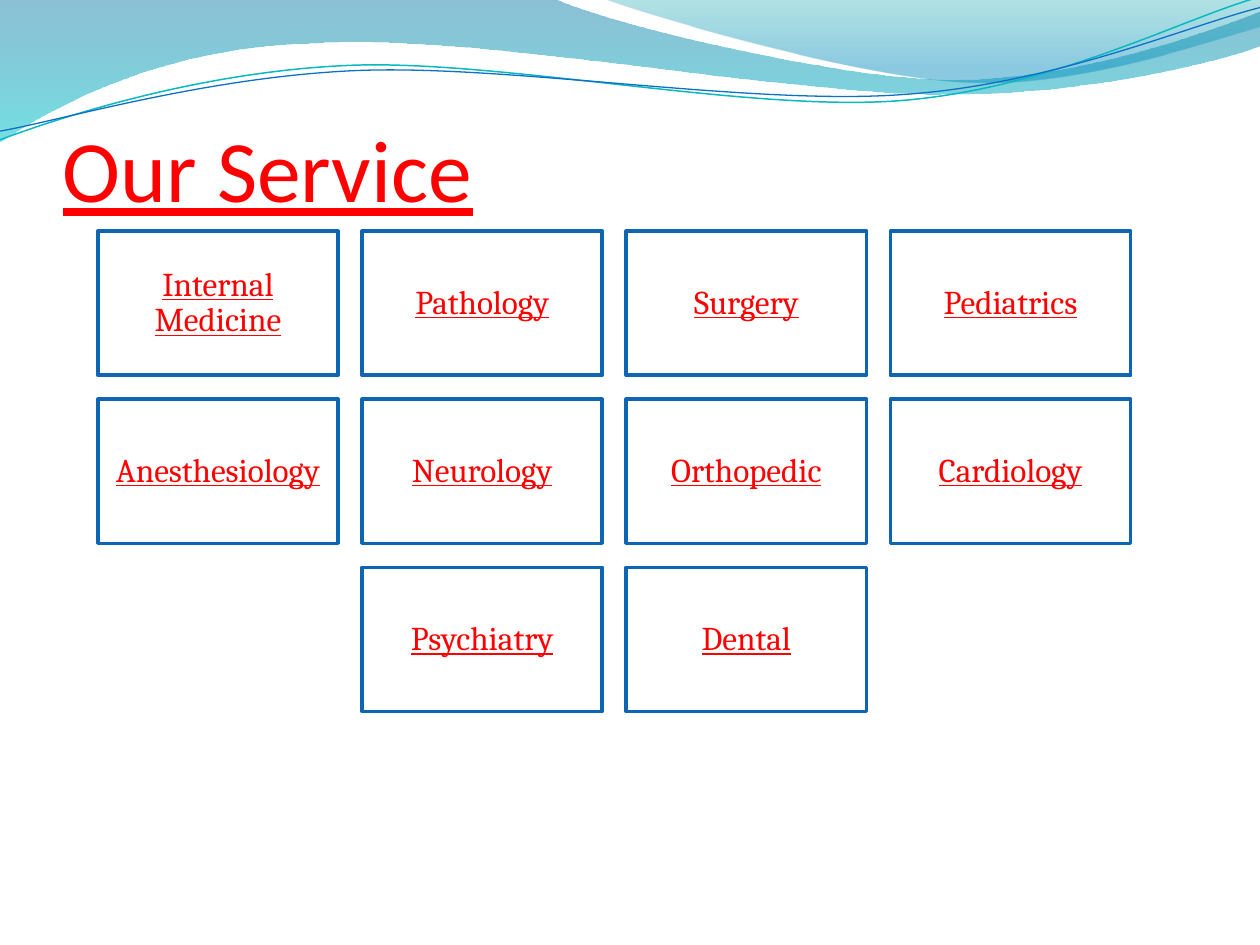
from dataclasses import dataclass

from lxml import etree
from pptx import Presentation
from pptx.dml.color import RGBColor
from pptx.enum import shapes, text
from pptx.oxml import ns
from pptx.util import Pt


@dataclass(frozen=True)
class Theme:
    """Colours, typefaces and type sizes of the deck."""
    accent: str = "FF0000"
    card_fill: str = "FFFFFF"
    card_line: str = "0E65B4"
    teal_line: str = "0AB8BF"
    blue_line: str = "0F6FC6"
    band: tuple = ((0, "0074A1", 45), (1, "00C6CF", 55))
    crest: tuple = ((0, "00A1A9", 30), (0.8, "008BBF", 45))
    title_font: str = "Calibri"
    card_font: str = "Cambria"
    title_size: float = 50
    card_size: float = 19


THEME = Theme()

BAND = [
    [(0, 0)], [(316.8, -0.7)],
    [(342.7, 12.2), (478.1, 45.4), (545.8, 45.4)],
    [(614.2, 45.4), (689.8, 18.7), (720, 6.5)],
    [(720.7, 25.9)],
    [(707.8, 31.7), (626.4, 54.7), (537.1, 54)],
    [(447.8, 54), (275, 20.2), (185, 24.5)],
    [(92.9, 25.9), (33.1, 59.8), (-0.7, 81.4)],
]
CREST = [
    [(344.9, -0.7)],
    [(366.5, 7.9), (491, 44.6), (553.7, 46.8)],
    [(616.3, 49.7), (691.9, 23), (720, 15.1)],
    [(720, 0)],
]
TEAL_WAVE = [
    [(0, 79.9)],
    [(34.6, 67), (113.8, 41), (199.4, 37.4)],
    [(284.4, 33.8), (427, 64.1), (513.4, 57.6)],
    [(599.8, 51.1), (675.4, 10.8), (718.6, -1.4)],
]
BLUE_WAVE = [
    [(0, 74.9)],
    [(33.8, 69.1), (118.1, 43.9), (203.8, 40.3)],
    [(290.2, 36.7), (429.8, 60.5), (516.2, 54)],
    [(601.9, 48.2), (677.5, 15.1), (720, 4.3)],
]
SERVICES = [
    ["Internal Medicine", "Pathology", "Surgery", "Pediatrics"],
    ["Anesthesiology", "Neurology", "Orthopedic", "Cardiology"],
    ["Psychiatry", "Dental"],
]


def rgb(value):
    """Return the colour for a hex value."""
    return RGBColor.from_string(value)


def bend(outline, segments):
    """Turn the sides that have control points into cubic curves."""
    sides = list(outline.element.iter(ns.qn("a:lnTo")))
    for side, points in zip(sides, segments):
        if len(points) == 3:
            curve = etree.Element(ns.qn("a:cubicBezTo"))
            for x, y in points:
                point = etree.SubElement(curve, ns.qn("a:pt"))
                point.set("x", str(x - outline.left))
                point.set("y", str(y - outline.top))
            side.getparent().replace(side, curve)


def add_outline(page, box, segments, close):
    """Draw a curved outline placed relative to the box."""
    left, top = box[:2]
    start, *sides = [[(Pt(left + x), Pt(top + y)) for x, y in points]
                     for points in segments]
    builder = page.shapes.build_freeform(*start[0])
    builder.add_line_segments([side[-1] for side in sides], close=close)
    outline = builder.convert_to_shape()
    outline.shadow.inherit = False
    bend(outline, sides)
    return outline


def add_gradient_area(page, box, segments, stops):
    """Draw a closed area with a translucent downward gradient."""
    area = add_outline(page, box, segments, True)
    area.line.fill.background()
    area.fill.gradient()
    area.fill.gradient_angle = 270
    for stop, (position, colour, _) in zip(area.fill.gradient_stops, stops):
        stop.position = position
        stop.color.rgb = rgb(colour)
    colours = area.element.spPr.iter(ns.qn("a:srgbClr"))
    for colour, (_, _, opacity) in zip(colours, stops):
        etree.SubElement(colour, ns.qn("a:alpha")).set("val", str(opacity * 1000))


def add_wave_line(page, box, segments, colour, width):
    """Draw an open curved line."""
    wave = add_outline(page, box, segments, False)
    wave.fill.background()
    wave.line.color.rgb = rgb(colour)
    wave.line.width = Pt(width)


def add_waves(page, box):
    """Draw the wave decoration along the top of the box."""
    add_gradient_area(page, box, BAND, THEME.band)
    add_gradient_area(page, box, CREST, THEME.crest)
    add_wave_line(page, box, TEAL_WAVE, THEME.teal_line, 0.85)
    add_wave_line(page, box, BLUE_WAVE, THEME.blue_line, 0.75)


def write(shape, words, font, size, anchor, insets):
    """Write one underlined paragraph in a shape and return it."""
    frame = shape.text_frame
    frame.word_wrap = True
    frame.vertical_anchor = anchor
    frame.margin_left, frame.margin_top, frame.margin_right, frame.margin_bottom = map(Pt, insets)
    para = frame.paragraphs[0]
    para.text = words
    para.font.name = font
    para.font.size = Pt(size)
    para.font.underline = True
    para.font.color.rgb = rgb(THEME.accent)
    return para


def add_title(page, box, words):
    """Place the title at the bottom of the box."""
    title = page.shapes.add_textbox(*map(Pt, box))
    write(title, words, THEME.title_font, THEME.title_size,
          text.MSO_ANCHOR.BOTTOM, (0, 3.6, 0, 0))


def add_card(page, box, words):
    """Draw one service card."""
    card = page.shapes.add_shape(shapes.MSO_SHAPE.RECTANGLE, *map(Pt, box))
    card.shadow.inherit = False
    card.fill.solid()
    card.fill.fore_color.rgb = rgb(THEME.card_fill)
    card.line.color.rgb = rgb(THEME.card_line)
    card.line.width = Pt(2)
    para = write(card, words, THEME.card_font, THEME.card_size,
                 text.MSO_ANCHOR.MIDDLE, (5.8,) * 4)
    para.alignment = text.PP_ALIGN.CENTER
    para.line_spacing = 0.9


def add_service_grid(page, box, rows, gap=13.7):
    """Lay out rows of equal cards, each row centred in the box."""
    left, top, width, height = box
    columns = max(map(len, rows))
    card_width = (width - gap * (columns - 1)) / columns
    card_height = (height - gap * (len(rows) - 1)) / len(rows)
    for row, names in enumerate(rows):
        indent = (columns - len(names)) / 2
        for column, name in enumerate(names):
            add_card(page, (left + (indent + column) * (card_width + gap),
                            top + row * (card_height + gap),
                            card_width, card_height), name)


def main():
    """Build and save the deck."""
    deck = Presentation()
    deck.slide_width, deck.slide_height = Pt(720), Pt(540)
    page = deck.slides.add_slide(deck.slide_layouts[6])
    add_waves(page, (0, 0, 720, 540))
    add_title(page, (36, 36, 648, 90), "Our Service")
    add_service_grid(page, (55.9, 132.1, 590.2, 274.4), SERVICES)
    deck.save("out.pptx")


if __name__ == "__main__":
    main()
